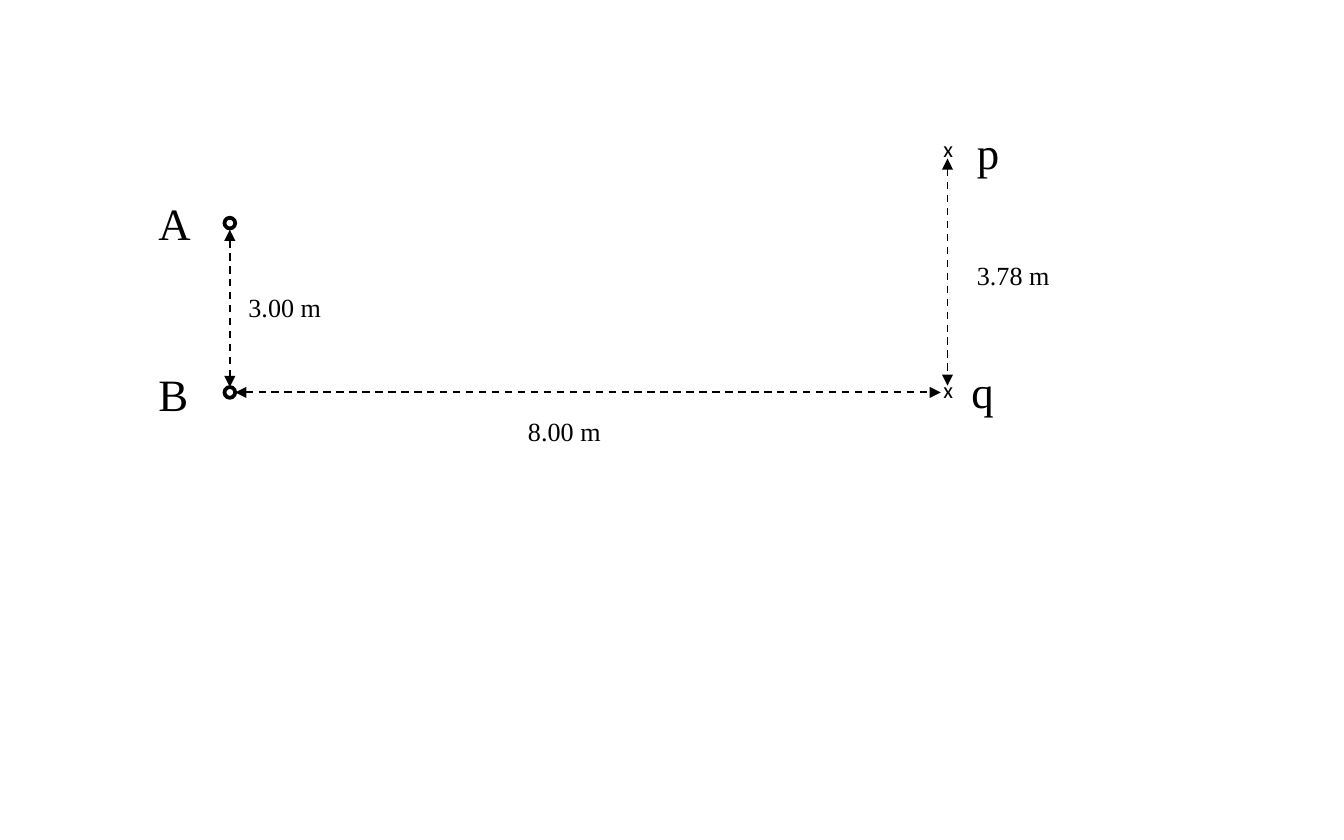
"""Draw two sources A and B and two points p and q with their distances."""
from pptx import Presentation
from pptx.dml.color import RGBColor
from pptx.enum.dml import MSO_LINE
from pptx.enum.shapes import MSO_CONNECTOR, MSO_SHAPE
from pptx.enum.text import MSO_AUTO_SIZE
from pptx.oxml.ns import qn
from pptx.util import Inches, Pt
from lxml.etree import SubElement

BLACK = RGBColor(0x00, 0x00, 0x00)
WHITE = RGBColor(0xFF, 0xFF, 0xFF)
SERIF, SANS = "Times New Roman", "Calibri"

DOT = 0.08
RINGS = [(1.67, 1.62), (1.67, 2.88)]
ARROWS = [
    ((1.75, 2.92), (7, 2.92)),
    ((1.71, 1.71), (1.71, 2.88)),
    ((7.05, 1.18), (7.05, 2.87)),
]
STYLES = {
    "name": (SERIF, 24, 0.5),
    "length": (SERIF, 14, 0.34),
    "cross": (SANS, 12, 0.3),
}
LABELS = [
    ("A", "name", 1.08, 1.41, 0.45),
    ("B", "name", 1.08, 2.68, 0.43),
    ("p", "name", 7.17, 0.88, 0.37),
    ("q", "name", 7.13, 2.66, 0.37),
    ("3.00 m", "length", 1.75, 2.12, 0.75),
    ("8.00 m", "length", 3.83, 3.04, 0.75),
    ("3.78 m", "length", 7.17, 1.88, 0.75),
    ("x", "cross", 6.92, 0.96, 0.28),
    ("x", "cross", 6.92, 2.75, 0.28),
]


def add_ring(shapes, left, top):
    ring = shapes.add_shape(
        MSO_SHAPE.OVAL, Inches(left), Inches(top), Inches(DOT), Inches(DOT)
    )
    ring.shadow.inherit = False
    ring.fill.solid()
    ring.fill.fore_color.rgb = WHITE
    ring.line.color.rgb = BLACK
    ring.line.width = Pt(2)


def add_arrow(shapes, start, end):
    ends = [Inches(value) for value in start + end]
    arrow = shapes.add_connector(MSO_CONNECTOR.STRAIGHT, *ends)
    arrow.line.color.rgb = BLACK
    arrow.line.width = Pt(1)
    arrow.line.dash_style = MSO_LINE.DASH
    props = arrow.line._get_or_add_ln()
    for tag in ("a:headEnd", "a:tailEnd"):
        SubElement(props, qn(tag), type="triangle")
    SubElement(arrow._element.spPr, qn("a:effectLst"))


def add_label(shapes, text, style, left, top, width):
    face, size, height = STYLES[style]
    box = shapes.add_textbox(
        Inches(left), Inches(top), Inches(width), Inches(height)
    )
    frame = box.text_frame
    frame.word_wrap = False
    frame.auto_size = MSO_AUTO_SIZE.SHAPE_TO_FIT_TEXT
    frame.text = text
    font = frame.paragraphs[0].runs[0].font
    font.name = face
    font.size = Pt(size)
    font.color.rgb = BLACK


def main():
    deck = Presentation()
    deck.slide_width, deck.slide_height = Inches(10), Inches(6.25)
    shapes = deck.slides.add_slide(deck.slide_layouts[6]).shapes
    for ring in RINGS:
        add_ring(shapes, *ring)
    for arrow in ARROWS:
        add_arrow(shapes, *arrow)
    for label in LABELS:
        add_label(shapes, *label)
    deck.save("out.pptx")


if __name__ == "__main__":
    main()
